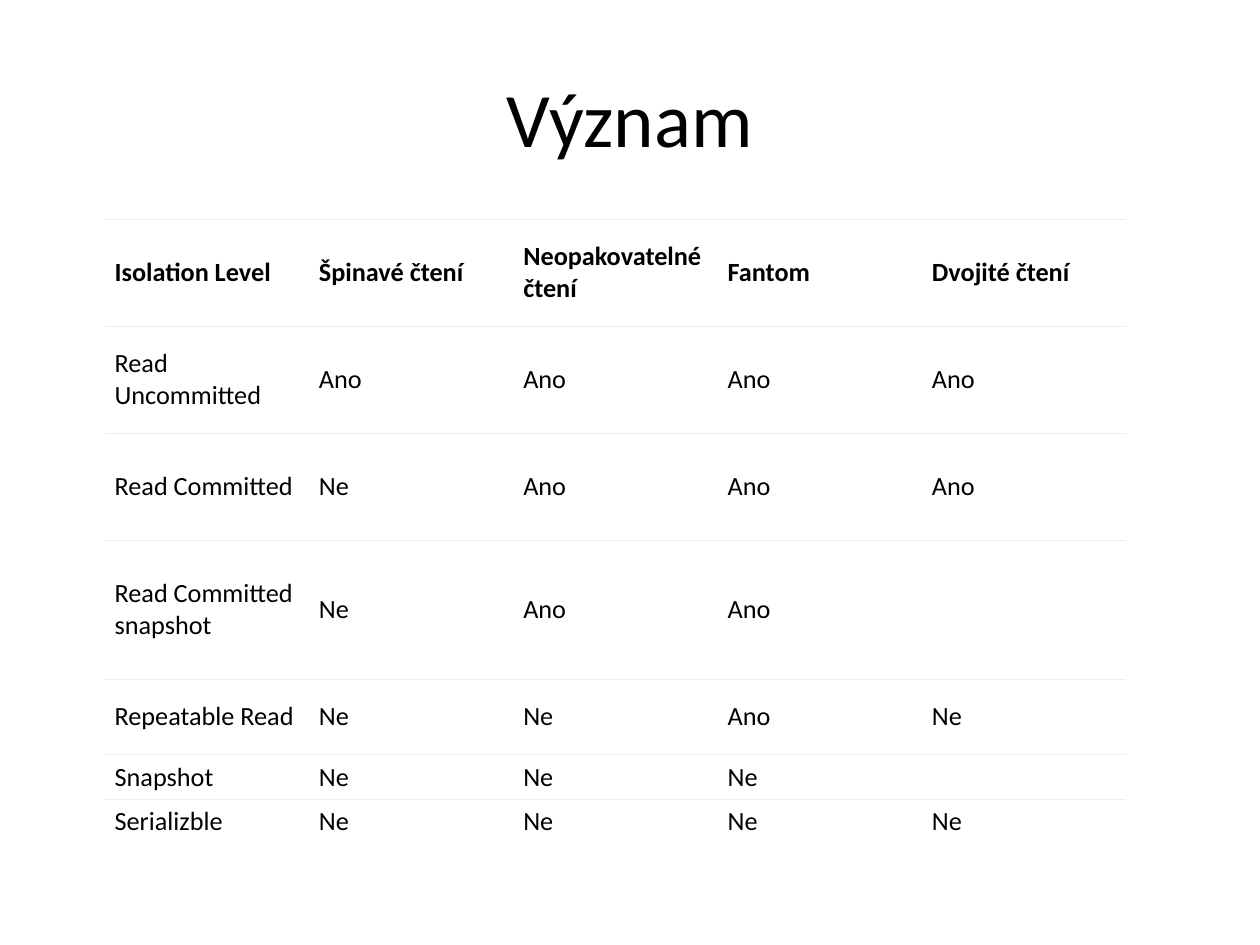
from dataclasses import dataclass

from lxml import etree
from pptx import Presentation
from pptx import util as u
from pptx.dml.color import RGBColor
from pptx.enum import text
from pptx.oxml import ns


@dataclass(frozen=True)
class Theme:
    font: str = "Calibri"
    ink: str = "000000"
    paper: str = "FFFFFF"
    rule: str = "EDEDED"
    title_size: int = 44
    body_size: int = 15
    rule_width: float = 0.75


THEME = Theme()
SLIDE_SIZE = (u.Inches(10), u.Inches(7.5))
TITLE_BOX = (0.05, 0.04, 0.9, 1 / 6)
LEVELS_BOX = (0.083, 0.232, 0.811, 0.66)
ROW_SHARES = (0.85, 0.85, 0.85, 1.1, 0.6, 0.35, 0.35)
CELL_FORMAT = {
    "margin_left": u.Inches(0.08),
    "margin_right": u.Inches(0.09),
    "margin_top": u.Inches(0.05),
    "margin_bottom": u.Inches(0.05),
    "vertical_anchor": text.MSO_ANCHOR.MIDDLE,
}
LEVELS = (
    ("Isolation Level", "Špinavé čtení", "Neopakovatelné čtení", "Fantom", "Dvojité čtení"),
    ("Read Uncommitted", "Ano", "Ano", "Ano", "Ano"),
    ("Read Committed", "Ne", "Ano", "Ano", "Ano"),
    ("Read Committed snapshot", "Ne", "Ano", "Ano", ""),
    ("Repeatable Read", "Ne", "Ne", "Ano", "Ne"),
    ("Snapshot", "Ne", "Ne", "Ne", ""),
    ("Serializble", "Ne", "Ne", "Ne", "Ne"),
)


def set_format(target, values):
    for name, value in values.items():
        setattr(target, name, value)


def place(box):
    return [round(share * side) for share, side in zip(box, SLIDE_SIZE * 2)]


def write(paragraph, wording, size, bold=False):
    if not wording:
        ending = etree.SubElement(paragraph._p, ns.qn("a:endParaRPr"))
        ending.set("sz", str(size * 100))
        return
    run = paragraph.add_run()
    run.text = wording
    set_format(run.font, {"name": THEME.font, "size": u.Pt(size), "bold": bold})
    run.font.color.rgb = RGBColor.from_string(THEME.ink)


def rule_cell(cell, ruled_sides):
    properties = cell._tc.get_or_add_tcPr()
    for position, side in enumerate("LRTB"):
        line = etree.Element(ns.qn(f"a:ln{side}"))
        if side in ruled_sides:
            line.set("w", str(int(u.Pt(THEME.rule_width))))
            fill = etree.SubElement(line, ns.qn("a:solidFill"))
            etree.SubElement(fill, ns.qn("a:srgbClr")).set("val", THEME.rule)
        else:
            etree.SubElement(line, ns.qn("a:noFill"))
        properties.insert(position, line)


def add_title(slide, box, wording):
    heading = slide.shapes.title
    set_format(heading, dict(zip(("left", "top", "width", "height"), place(box))))
    heading.text_frame.vertical_anchor = text.MSO_ANCHOR.MIDDLE
    paragraph = heading.text_frame.paragraphs[0]
    paragraph.alignment = text.PP_ALIGN.CENTER
    write(paragraph, wording, THEME.title_size)


def add_levels(slide, box, levels):
    bounds = place(box)
    grid = slide.shapes.add_table(len(levels), len(levels[0]), *bounds).table
    grid.horz_banding = False
    for column in grid.columns:
        column.width = bounds[2] // len(levels[0])
    for r, (level, share) in enumerate(zip(levels, ROW_SHARES)):
        grid.rows[r].height = round(bounds[3] * share / sum(ROW_SHARES))
        for c, wording in enumerate(level):
            cell = grid.cell(r, c)
            set_format(cell, CELL_FORMAT)
            cell.fill.solid()
            cell.fill.fore_color.rgb = RGBColor.from_string(THEME.paper)
            rule_cell(cell, "T" if r == len(levels) - 1 else "TB")
            write(cell.text_frame.paragraphs[0], wording, THEME.body_size, bold=r == 0)


def main():
    deck = Presentation()
    deck.slide_width, deck.slide_height = SLIDE_SIZE
    slide = deck.slides.add_slide(deck.slide_layouts.get_by_name("Title Only"))
    add_title(slide, TITLE_BOX, "Význam")
    add_levels(slide, LEVELS_BOX, LEVELS)
    deck.save("out.pptx")


if __name__ == "__main__":
    main()
